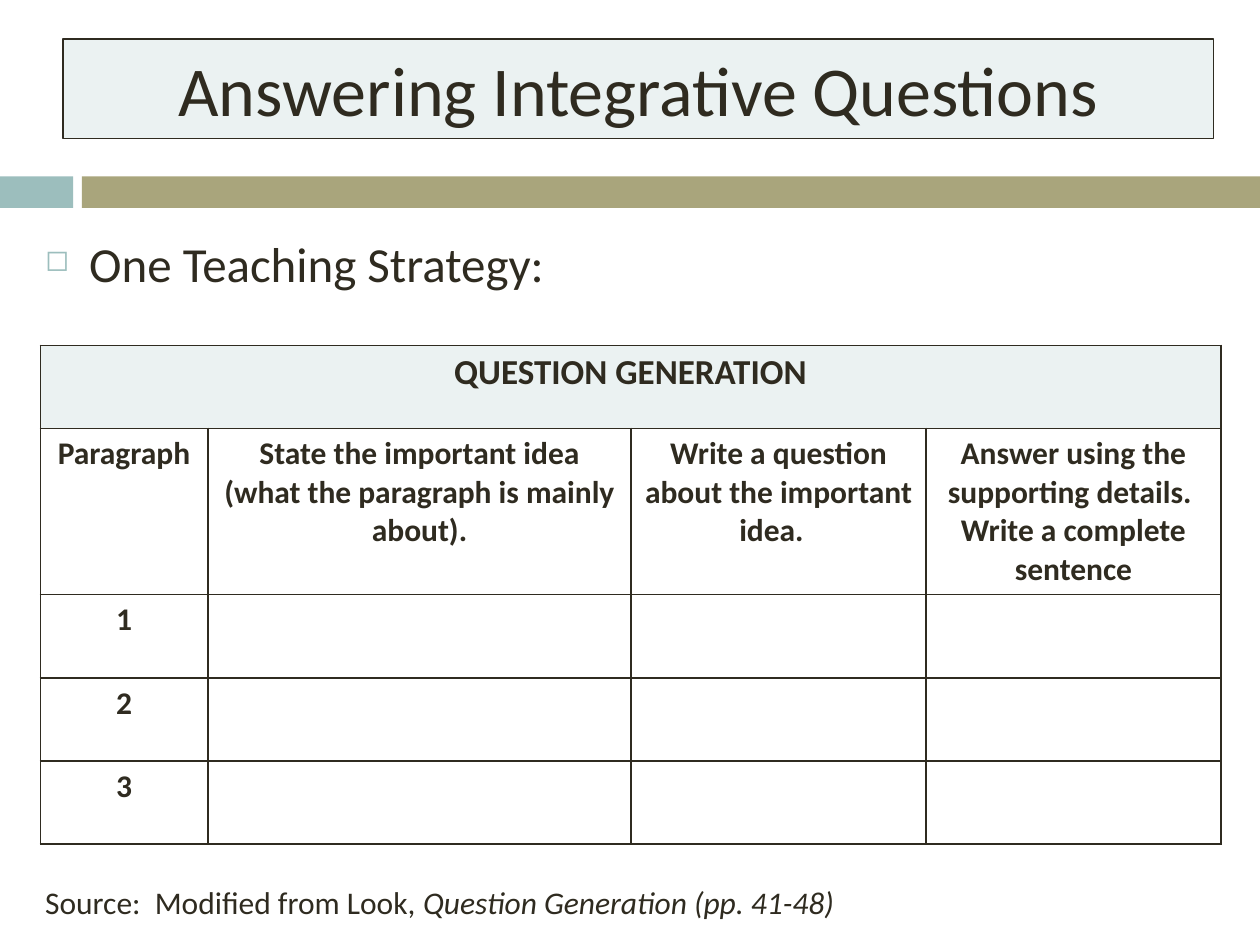
from lxml import etree
from pptx import Presentation
from pptx.dml.color import RGBColor
from pptx.enum import shapes, text
from pptx.oxml.ns import qn
from pptx.util import Inches, Pt

INK = RGBColor(0x2F, 0x2B, 0x20)
TEAL = RGBColor(0x9C, 0xBE, 0xBD)
OLIVE = RGBColor(0xA9, 0xA5, 0x7C)
PALE = RGBColor(0xEB, 0xF2, 0xF2)


def style(p, size, bold=False, align=None):
    p.alignment = align
    for r in p.runs:
        r.font.name = "Calibri"
        r.font.size = Pt(size)
        r.font.bold = bold
        r.font.color.rgb = INK


def add_box(kind, left, top, width, height, fill=None):
    """Add a rectangle with a fill, or a wrapping text box when kind is None."""
    box = [Inches(v) for v in (left, top, width, height)]
    if kind is None:
        sp = s.shapes.add_textbox(*box)
    else:
        sp = s.shapes.add_shape(kind, *box)
        sp.shadow.inherit = False
        sp.fill.solid()
        sp.fill.fore_color.rgb = fill
        sp.line.fill.background()
    sp.text_frame.word_wrap = True
    return sp


prs = Presentation()
prs.slide_width, prs.slide_height = Inches(10), Inches(7.5)
s = prs.slides.add_slide(prs.slide_layouts[6])
RECT = shapes.MSO_SHAPE.RECTANGLE
CENTER = text.PP_ALIGN.CENTER

# Divider bars
add_box(RECT, 0, 1.4, 0.58, 0.25, TEAL)
add_box(RECT, 0.65, 1.4, 9.35, 0.25, OLIVE)

# Strategy bullet
p = add_box(None, 0.26, 1.8, 9.38, 0.78).text_frame.paragraphs[0]
p.text = "One Teaching Strategy:"
p.space_before = Pt(7)
style(p, 28)
pPr = p._p.get_or_add_pPr()
pPr.set("marL", str(Inches(0.35)))
pPr.set("indent", str(-Inches(0.35)))
color = etree.SubElement(pPr, qn("a:buClr"))
etree.SubElement(color, qn("a:srgbClr"), val=str(TEAL))
etree.SubElement(pPr, qn("a:buSzPct"), val="60000")
etree.SubElement(pPr, qn("a:buChar"), char="◻")

# Title
title = add_box(RECT, 0.5, 0.31, 9.13, 0.79, PALE)
title.line.color.rgb = INK
title.line.width = Pt(0.75)
title.text_frame.vertical_anchor = text.MSO_ANCHOR.MIDDLE
title.text_frame.text = "Answering Integrative Questions"
style(title.text_frame.paragraphs[0], 40, align=CENTER)

# Question generation table
rows = [
    ["QUESTION GENERATION"],
    ["Paragraph",
     "State the important idea (what the paragraph is mainly about).",
     "Write a question about the important idea.  ",
     "Answer using the supporting details.  Write a complete sentence"],
    ["1"], ["2"], ["3"],
]
col_widths = [1.33, 3.36, 2.34, 2.34]
row_heights = [0.66, 1.32, 0.66, 0.66, 0.66]
table = s.shapes.add_table(len(rows), len(col_widths), Inches(0.32), Inches(2.74),
                           Inches(sum(col_widths)), Inches(sum(row_heights))).table
table.first_row = table.horz_banding = False
for col, width in zip(table.columns, col_widths):
    col.width = Inches(width)
for row, height in zip(table.rows, row_heights):
    row.height = Inches(height)
table.cell(0, 0).merge(table.cell(0, len(col_widths) - 1))

for i, row in enumerate(table.rows):
    for j, cell in enumerate(row.cells):
        if i == 0:
            cell.fill.solid()
            cell.fill.fore_color.rgb = PALE
        else:
            cell.fill.background()
        if j < len(rows[i]):
            cell.text_frame.text = rows[i][j]
            style(cell.text_frame.paragraphs[0], 20 if i == 0 else 18, True, CENTER)
        tcPr = cell._tc.get_or_add_tcPr()
        for k, side in enumerate(("lnL", "lnR", "lnT", "lnB")):
            ln = etree.Element(qn(f"a:{side}"), w=str(Pt(1)))
            fill = etree.SubElement(ln, qn("a:solidFill"))
            etree.SubElement(fill, qn("a:srgbClr"), val=str(INK))
            tcPr.insert(k, ln)

# Source line
p = add_box(None, 0.26, 6.96, 9.38, 0.71).text_frame.paragraphs[0]
p.add_run().text = "Source:  Modified from Look, "
p.add_run().text = "Question Generation (pp. 41-48)"
style(p, 18)
p.runs[1].font.italic = True

prs.save("out.pptx")
